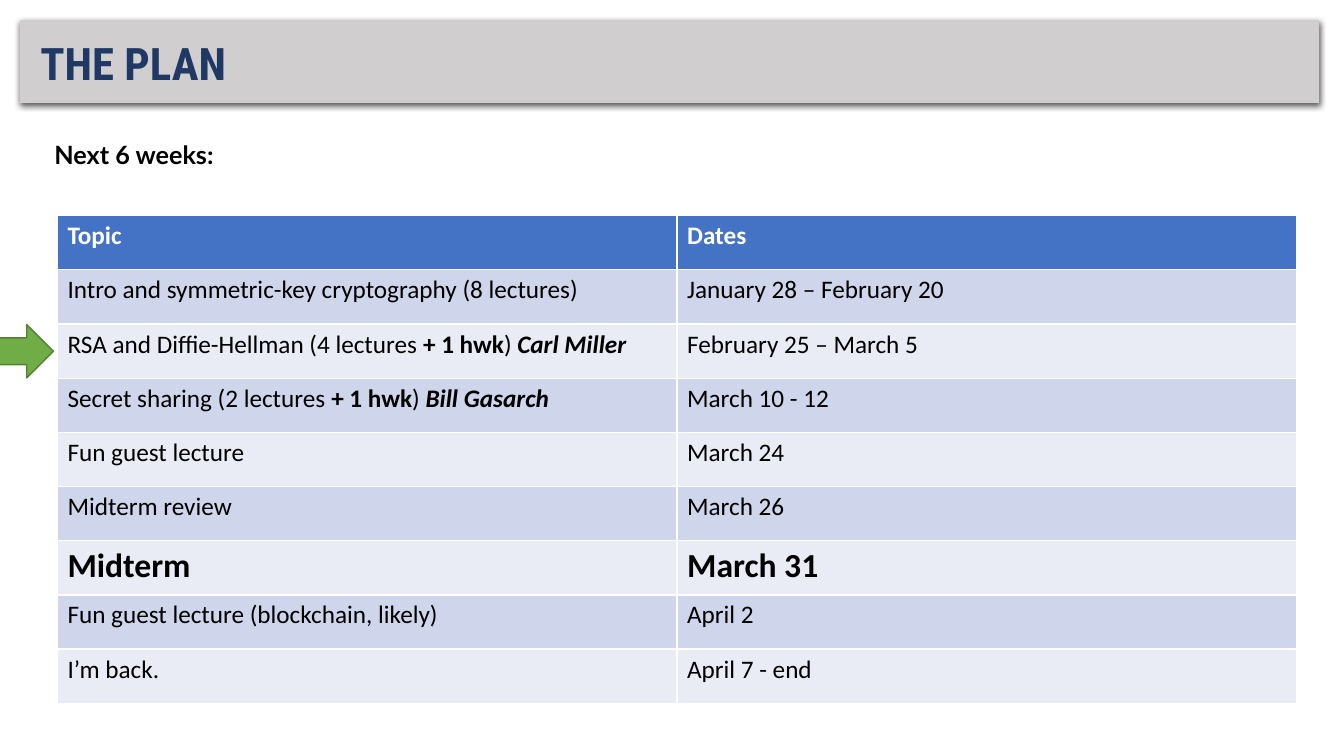
from dataclasses import dataclass

from lxml import etree
from pptx import Presentation
from pptx.dml.color import RGBColor
from pptx.enum.shapes import MSO_SHAPE
from pptx.enum.text import MSO_ANCHOR, MSO_AUTO_SIZE, PP_ALIGN
from pptx.oxml.ns import qn
from pptx.util import Pt

RECT = MSO_SHAPE.RECTANGLE
ARROW = MSO_SHAPE.RIGHT_ARROW
LEFT = PP_ALIGN.LEFT
TOP, MIDDLE = MSO_ANCHOR.TOP, MSO_ANCHOR.MIDDLE
FIXED = MSO_AUTO_SIZE.NONE
SCALE = 9144  # EMU in one px, 100 px to the inch


@dataclass(frozen=True)
class Theme:
    white: str = "FFFFFF"
    black: str = "000000"
    navy: str = "203864"
    gray: str = "D0CECE"
    blue: str = "4472C4"
    bands: tuple = ("CFD5EA", "E9EBF5")
    green: str = "70AD47"
    edge: str = "538035"
    head: str = "Roboto Condensed"
    lead: str = "Lato"
    body: str = "Calibri"
    large: int = 32
    mid: int = 24
    small: int = 18


THEME = Theme()

# Each topic is a list of (text, style) parts; b is bold, i is italic.
PLAN = [
    ([("Topic", "b")], "Dates"),
    ([("Intro and symmetric-key cryptography (8 lectures)", "")],
     "January 28 – February 20"),
    ([("RSA and Diffie-Hellman (4 lectures ", ""), ("+ 1 hwk", "b"),
      (") ", ""), ("Carl Miller", "bi")], "February 25 – March 5"),
    ([("Secret sharing (2 lectures ", ""), ("+ 1 hwk", "b"),
      (") ", ""), ("Bill Gasarch", "bi")], "March 10 - 12"),
    ([("Fun guest lecture", "")], "March 24"),
    ([("Midterm review", "")], "March 26"),
    ([("Midterm", "b")], "March 31"),
    ([("Fun guest lecture (blockchain, likely)", "")], "April 2"),
    ([("I’m back.", "")], "April 7 - end"),
]
EXAM = 6  # row of the midterm


def px(count):
    return count * SCALE


def tint(fill, color):
    fill.solid()
    fill.fore_color.rgb = RGBColor.from_string(color)


def style(run, face, size, color, bold=False, slant=False):
    font = run.font
    font.name, font.size = face, Pt(size)
    font.bold, font.italic = bold, slant
    font.color.rgb = RGBColor.from_string(color)


def add_shape(slide, kind, box, fill, edge=None):
    shape = slide.shapes.add_shape(kind, *map(px, box))
    tint(shape.fill, fill)
    if edge:
        tint(shape.line.fill, edge)
        shape.line.width = Pt(1)
    else:
        shape.line.fill.background()
    shape.shadow.inherit = False
    return shape


def add_shadow(shape):
    effects = shape.element.spPr.find(qn("a:effectLst"))
    outer = etree.SubElement(effects, qn("a:outerShdw"), blurRad=str(Pt(4.5)),
                             dist=str(Pt(1.5)), dir="5400000", algn="ctr",
                             rotWithShape="0")
    color = etree.SubElement(outer, qn("a:srgbClr"), val=THEME.black)
    etree.SubElement(color, qn("a:alpha"), val="63000")


def fill_holder(holder, box, text, anchor, face, size, color):
    """Place a template placeholder and give it one bold, unbulleted line."""
    holder.left, holder.top, holder.width, holder.height = map(px, box)
    frame = holder.text_frame
    frame.text = text
    frame.auto_size = FIXED
    frame.vertical_anchor = anchor
    line = frame.paragraphs[0]
    line.alignment = LEFT
    line.line_spacing = 0.9
    style(line.runs[0], face, size, color, bold=True)
    return line


def drop_bullet(line):
    props = line._p.get_or_add_pPr()
    props.set("marL", "0")
    props.set("indent", "0")
    etree.SubElement(props, qn("a:buNone"))


def fill_cell(cell, parts, fill, size, color):
    tint(cell.fill, fill)
    line = cell.text_frame.paragraphs[0]
    for text, marks in parts:
        run = line.add_run()
        run.text = text
        style(run, THEME.body, size, color, "b" in marks, "i" in marks)


def add_plan(slide, box):
    table = slide.shapes.add_table(len(PLAN), 2, *map(px, box)).table
    for row in table.rows:
        row.height = px(box[3]) // len(PLAN)
    for num, (topic, dates) in enumerate(PLAN):
        fill = THEME.bands[(num - 1) % 2] if num else THEME.blue
        color = THEME.black if num else THEME.white
        size = THEME.mid if num == EXAM else THEME.small
        marks = "b" if num in (0, EXAM) else ""
        for col, parts in enumerate((topic, [(dates, marks)])):
            fill_cell(table.cell(num, col), parts, fill, size, color)


def main():
    deck = Presentation()
    deck.slide_width, deck.slide_height = px(1333), px(750)
    slide = deck.slides.add_slide(deck.slide_layouts[1])
    title, body = slide.placeholders

    bar = add_shape(slide, RECT, (20, 20, 1288, 82), THEME.gray)
    add_shadow(bar)
    title.element.addprevious(bar.element)
    fill_holder(title, (30, 28, 1283, 75), "THE PLAN", MIDDLE,
                THEME.head, THEME.large, THEME.navy)
    line = fill_holder(body, (44, 137, 1229, 585), "Next 6 weeks:", TOP,
                       THEME.lead, THEME.small, THEME.black)
    line.space_before = Pt(10)
    drop_bullet(line)
    add_plan(slide, (57, 214, 1229, 484))
    add_shape(slide, ARROW, (-54, 322, 107, 53), THEME.green, THEME.edge)
    deck.save("out.pptx")


if __name__ == "__main__":
    main()
